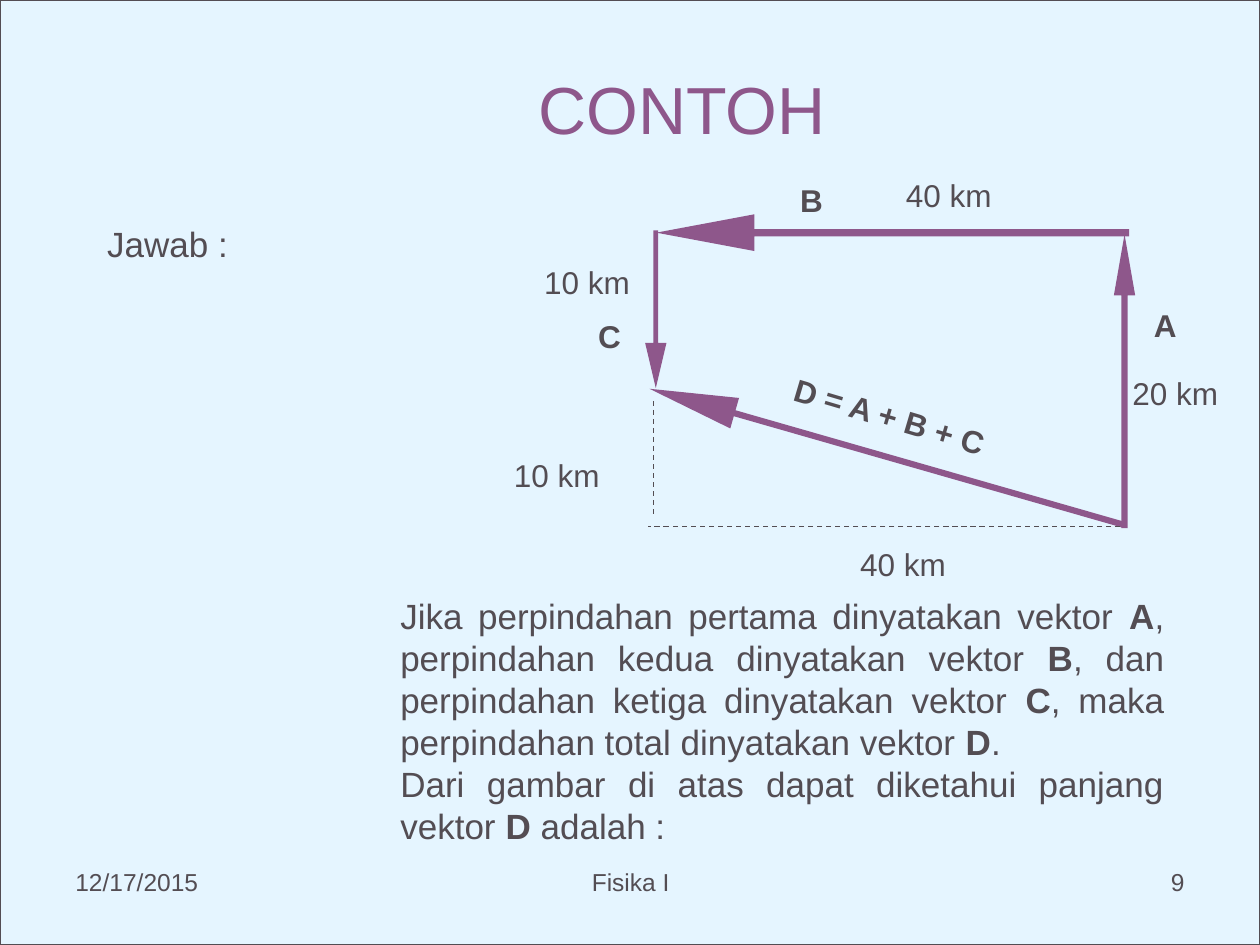
from dataclasses import dataclass

from lxml.etree import SubElement
from pptx import Presentation
from pptx.dml.color import RGBColor
from pptx.enum.dml import MSO_LINE
from pptx.enum.shapes import MSO_CONNECTOR, MSO_SHAPE
from pptx.enum.text import MSO_ANCHOR, PP_ALIGN
from pptx.oxml.ns import qn
from pptx.slide import Slide
from pptx.util import Cm, Pt


@dataclass(frozen=True)
class Theme:
    font: str = "Arial"
    ink: RGBColor = RGBColor(0x53, 0x4D, 0x53)
    accent: RGBColor = RGBColor(0x8E, 0x57, 0x8B)
    paper: RGBColor = RGBColor(0xE5, 0xF5, 0xFF)
    title: float = 38
    body: float = 20
    label: float = 18
    footer: float = 14
    leading: float = 1.2
    hairline: float = 0.75


THEME = Theme()


@dataclass(frozen=True)
class Box:
    """Position and size in centimetres."""
    left: float
    top: float
    width: float
    height: float

    def emu(self) -> tuple[Cm, Cm, Cm, Cm]:
        return Cm(self.left), Cm(self.top), Cm(self.width), Cm(self.height)


@dataclass(frozen=True)
class Text:
    """Each paragraph is split by "*" into alternating plain and bold runs."""
    box: Box
    paragraphs: tuple[str, ...]
    size: float = THEME.label
    align: PP_ALIGN = PP_ALIGN.LEFT
    rotation: float = 0


@dataclass(frozen=True)
class Vector:
    box: Box
    rotation: float
    shaft: float
    head: float


@dataclass(frozen=True)
class Guide:
    x1: float
    y1: float
    x2: float
    y2: float


def distance(left: float, top: float, km: int) -> Text:
    return Text(Box(left, top, 2.34, 0.93), (f"{km} km",))


def vector_name(left: float, top: float, name: str) -> Text:
    return Text(Box(left, top, 1.07, 0.93), (f"*{name}*",))


def footer(left: float, width: float, text: str, align: PP_ALIGN) -> Text:
    return Text(Box(left, 17.35, width, 1.32), (text,), THEME.footer, align)


VECTORS = (
    Vector(Box(19.71, 7.47, 5.92, 0.43), 270, 0.285, 2.86),
    Vector(Box(11.63, 6.02, 3.18, 0.43), 90, 0.222, 2.12),
    Vector(Box(13.23, 4.32, 9.53, 0.74), 180, 0.196, 2.67),
    Vector(Box(12.9, 8.89, 9.96, 0.64), 196, 0.196, 2.79),
)

GUIDES = (
    Guide(13.18, 8.08, 13.18, 10.39),
    Guide(22.58, 10.62, 13.06, 10.62),
)

TEXTS = (
    footer(1.27, 5.92, "12/17/2015", PP_ALIGN.LEFT),
    footer(8.69, 8.05, "Fisika I", PP_ALIGN.CENTER),
    footer(18.21, 5.92, "9", PP_ALIGN.RIGHT),
    Text(Box(1.91, 4.37, 3.18, 1.09), ("Jawab :",), THEME.body),
    distance(18.01, 3.43, 40),
    distance(10.72, 5.18, 10),
    distance(22.58, 7.42, 20),
    distance(10.11, 9.07, 10),
    distance(17.09, 10.87, 40),
    vector_name(23.01, 6.05, "A"),
    vector_name(15.88, 3.53, "B"),
    vector_name(11.81, 6.27, "C"),
    Text(Box(15.7, 8, 5.28, 0.93), ("*D = A + B + C*",), rotation=16.6),
    Text(
        Box(7.82, 11.86, 15.9, 5.38),
        (
            "Jika perpindahan pertama dinyatakan vektor *A*, "
            "perpindahan kedua dinyatakan vektor *B*, dan "
            "perpindahan ketiga dinyatakan vektor *C*, maka "
            "perpindahan total dinyatakan vektor *D*.",
            "Dari gambar di atas dapat diketahui panjang vektor *D* adalah :",
        ),
        THEME.body,
        PP_ALIGN.JUSTIFY,
    ),
)


def add_title(slide: Slide, text: str, box: Box) -> None:
    sp = slide.shapes.title
    sp.left, sp.top, sp.width, sp.height = box.emu()
    tf = sp.text_frame
    tf.text = text
    tf.vertical_anchor = MSO_ANCHOR.MIDDLE
    p = tf.paragraphs[0]
    p.alignment = PP_ALIGN.CENTER
    p.font.name, p.font.size = THEME.font, Pt(THEME.title)
    p.font.color.rgb = THEME.accent


def add_backdrop(slide: Slide, box: Box) -> None:
    """Put the framed panel behind the title."""
    sp = slide.shapes.add_shape(MSO_SHAPE.RECTANGLE, *box.emu())
    sp.shadow.inherit = False
    sp.fill.solid()
    sp.fill.fore_color.rgb = THEME.paper
    sp.line.color.rgb = THEME.ink
    sp.line.width = Pt(THEME.hairline)
    slide.shapes.title.element.addprevious(sp.element)


def add_vector(slide: Slide, vector: Vector) -> None:
    sp = slide.shapes.add_shape(MSO_SHAPE.RIGHT_ARROW, *vector.box.emu())
    sp.rotation = vector.rotation
    sp.adjustments[0], sp.adjustments[1] = vector.shaft, vector.head
    sp.shadow.inherit = False
    sp.fill.solid()
    sp.fill.fore_color.rgb = THEME.accent
    sp.line.fill.background()


def add_guide(slide: Slide, guide: Guide) -> None:
    line = slide.shapes.add_connector(
        MSO_CONNECTOR.STRAIGHT,
        Cm(guide.x1), Cm(guide.y1), Cm(guide.x2), Cm(guide.y2),
    )
    line.line.color.rgb = THEME.ink
    line.line.width = Pt(THEME.hairline)
    line.line.dash_style = MSO_LINE.DASH
    SubElement(line.element.spPr, qn("a:effectLst"))


def add_text(slide: Slide, text: Text) -> None:
    sp = slide.shapes.add_textbox(*text.box.emu())
    sp.rotation = text.rotation
    tf = sp.text_frame
    tf.word_wrap = True
    for i, paragraph in enumerate(text.paragraphs):
        p = tf.add_paragraph() if i else tf.paragraphs[0]
        p.alignment = text.align
        p.line_spacing = Pt(text.size * THEME.leading)
        p.font.name, p.font.size = THEME.font, Pt(text.size)
        p.font.color.rgb = THEME.ink
        for j, part in enumerate(paragraph.split("*")):
            if part:
                r = p.add_run()
                r.text = part
                r.font.bold = j % 2 == 1


def main() -> None:
    prs = Presentation()
    prs.slide_width, prs.slide_height = Cm(25.4), Cm(19.05)
    slide = prs.slides.add_slide(prs.slide_layouts.get_by_name("Title Only"))
    add_backdrop(slide, Box(0, 0, 25.4, 19.05))
    add_title(slide, "CONTOH", Box(9.73, 1.07, 8.05, 2.21))
    for vector in VECTORS:
        add_vector(slide, vector)
    for guide in GUIDES:
        add_guide(slide, guide)
    for text in TEXTS:
        add_text(slide, text)
    prs.save("out.pptx")


if __name__ == "__main__":
    main()
